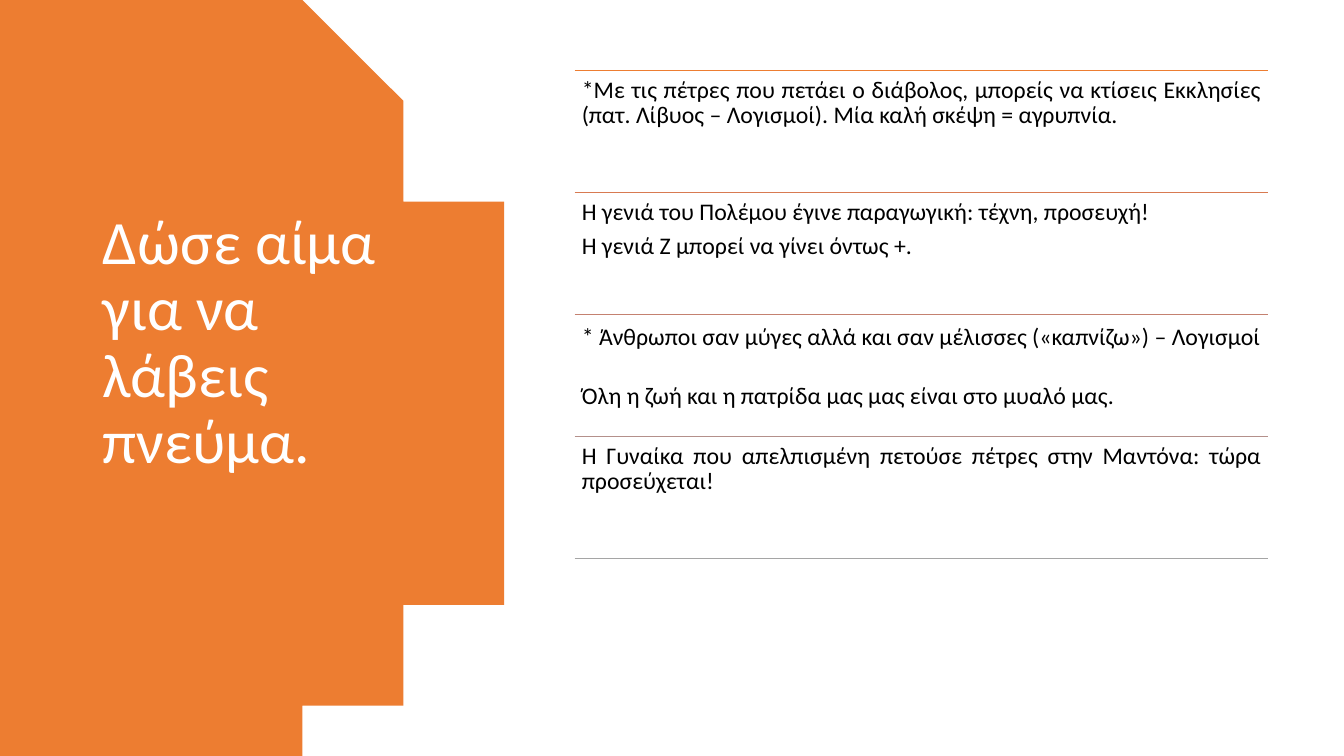
from dataclasses import dataclass
from math import asin, cos, sin

from lxml import etree
from pptx import Presentation
from pptx.dml.color import RGBColor
from pptx.enum.shapes import MSO_CONNECTOR
from pptx.enum.text import MSO_ANCHOR, MSO_AUTO_SIZE, PP_ALIGN
from pptx.oxml.ns import qn
from pptx.util import Inches, Pt

STRAIGHT = MSO_CONNECTOR.STRAIGHT
LEFT, JUSTIFY = PP_ALIGN.LEFT, PP_ALIGN.JUSTIFY
TOP, MIDDLE = MSO_ANCHOR.TOP, MSO_ANCHOR.MIDDLE
NO_AUTOFIT = MSO_AUTO_SIZE.NONE

FONT = "Calibri"
COLORS = {
    "orange": "ED7D31",
    "copper": "D87A51",
    "rose": "C48170",
    "mauve": "B4908B",
    "gray": "A5A5A5",
    "white": "FFFFFF",
    "black": "000000",
}
SLIDE_W, SLIDE_H = 13.33, 7.5
ROW_X, ROW_Y, ROW_W, ROW_H = 5.7, 0.7, 6.88, 1.21
ROW_INSET = 0.07


@dataclass
class Row:
    color: str
    paragraphs: list[str]
    first_spacing: float = 0.9
    first_after: float = 6
    gap: float = 0  # points before each later paragraph


ROWS = [
    Row("orange", ["*Με τις πέτρες που πετάει ο διάβολος, μπορείς να κτίσεις Εκκλησίες "
                   "(πατ. Λίβυος – Λογισμοί). Μία καλή σκέψη = αγρυπνία."]),
    Row("copper", ["Η γενιά του Πολέμου έγινε παραγωγική: τέχνη, προσευχή!",
                   "Η γενιά Ζ μπορεί να γίνει όντως +."]),
    Row("rose", ["* Άνθρωποι σαν μύγες αλλά και σαν μέλισσες («καπνίζω») – Λογισμοί",
                 "Όλη η ζωή και η πατρίδα μας μας είναι στο μυαλό μας."],
        first_spacing=1.0, first_after=0, gap=24),
    Row("mauve", ["Η Γυναίκα που απελπισμένη πετούσε πέτρες στην Μαντόνα: τώρα προσεύχεται!"]),
]


def rgb(name: str) -> RGBColor:
    return RGBColor.from_string(COLORS[name])


def format_runs(p, size: float, color: str) -> None:
    for r in p.runs:
        r.font.name = FONT
        r.font.size = Pt(size)
        r.font.color.rgb = rgb(color)


def add_panel(s):
    """Draw the left panel, whose right edge is a circular arc."""
    radius, center_x, center_y = 4.4, 0.53, SLIDE_H / 2
    half_angle, steps = asin(center_y / radius), 120
    angles = [half_angle * (2 * i / steps - 1) for i in range(steps + 1)]
    arc = [(center_x + radius * cos(a), center_y + radius * sin(a)) for a in angles]
    builder = s.shapes.build_freeform(0, 0, scale=Inches(1))
    builder.add_line_segments(arc + [(0, SLIDE_H)], close=True)
    sp = builder.convert_to_shape()
    sp.shadow.inherit = False
    sp.fill.solid()
    sp.fill.fore_color.rgb = rgb("orange")
    sp.line.fill.background()
    return sp


def set_title(s, panel) -> None:
    sp = s.shapes.title
    panel._element.addnext(sp._element)  # title in front of the panel
    sp.left, sp.top, sp.width, sp.height = map(Inches, (0.92, 0.7, 3.23, 6.09))
    tf = sp.text_frame
    tf.text = "Δώσε αίμα για να λάβεις πνεύμα."
    tf.word_wrap = True
    tf.auto_size = NO_AUTOFIT
    tf.vertical_anchor = MIDDLE
    tf.margin_bottom = Inches(0.71)  # lifts the text above the middle
    p = tf.paragraphs[0]
    p.alignment = LEFT
    p.line_spacing = 0.9
    p.space_before = Pt(0)
    format_runs(p, 44, "white")


def add_rule(s, y: float, color: str) -> None:
    line = s.shapes.add_connector(
        STRAIGHT, Inches(ROW_X), Inches(y), Inches(ROW_X + ROW_W), Inches(y))
    line.line.color.rgb = rgb(color)
    line.line.width = Pt(1)
    etree.SubElement(line._element.spPr, qn("a:effectLst"))


def add_row(s, y: float, row: Row) -> None:
    add_rule(s, y, row.color)
    sp = s.shapes.add_textbox(Inches(ROW_X), Inches(y), Inches(ROW_W), Inches(ROW_H))
    tf = sp.text_frame
    tf.text = "\n".join(row.paragraphs)
    tf.word_wrap = True
    tf.vertical_anchor = TOP
    tf.margin_left = tf.margin_right = Inches(ROW_INSET)
    tf.margin_top = tf.margin_bottom = Inches(ROW_INSET)
    for i, p in enumerate(tf.paragraphs):
        p.alignment = JUSTIFY
        p.line_spacing = 0.9 if i else row.first_spacing
        p.space_before = Pt(row.gap if i else 0)
        p.space_after = Pt(6 if i else row.first_after)
        format_runs(p, 17, "black")


def main() -> None:
    prs = Presentation()
    prs.slide_width, prs.slide_height = Inches(SLIDE_W), Inches(SLIDE_H)
    s = prs.slides.add_slide(prs.slide_layouts[5])

    # Left panel with the title
    set_title(s, add_panel(s))

    # Ruled rows of notes, closed by a last rule
    for i, row in enumerate(ROWS):
        add_row(s, ROW_Y + i * ROW_H, row)
    add_rule(s, ROW_Y + len(ROWS) * ROW_H, "gray")

    prs.save("out.pptx")


if __name__ == "__main__":
    main()
